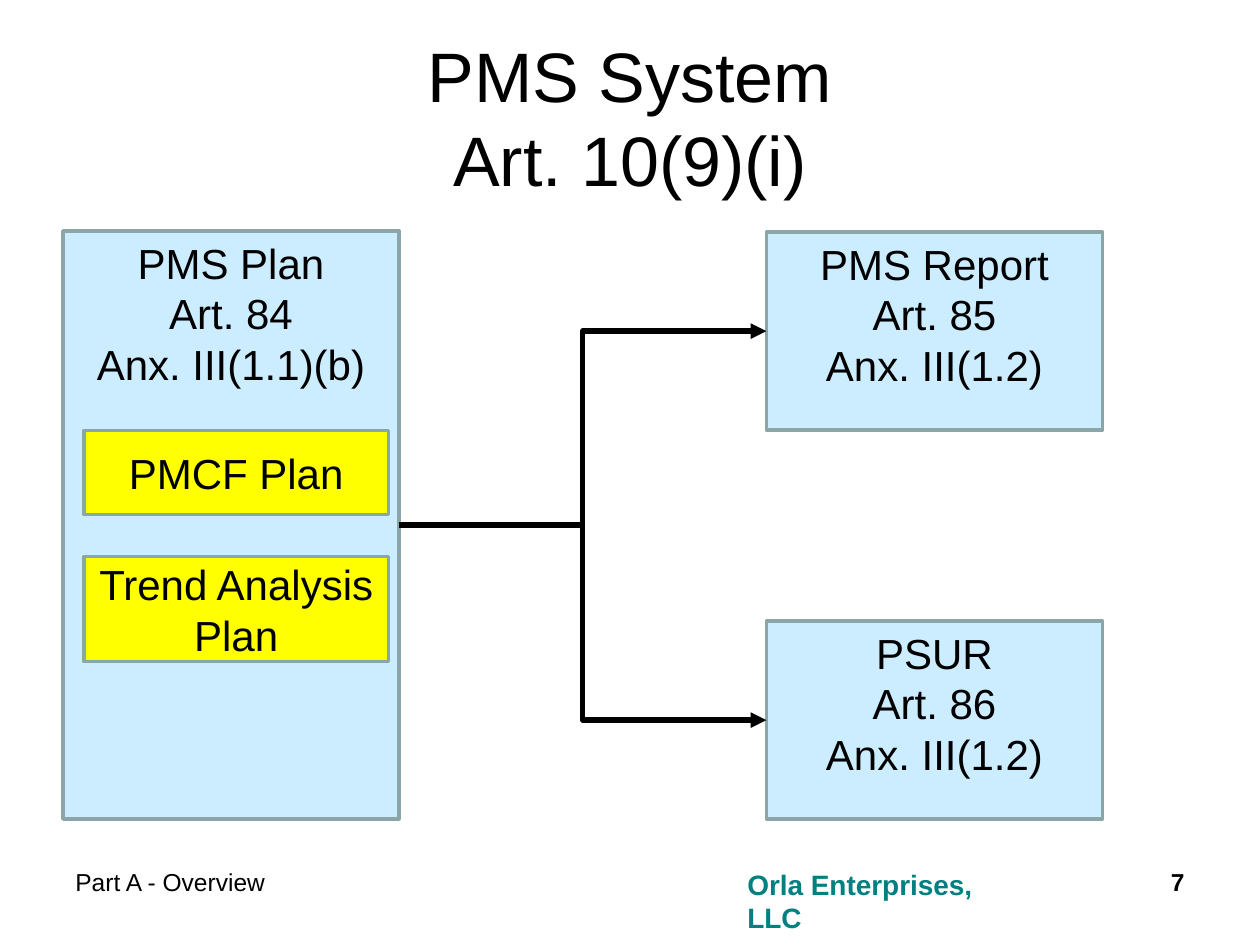
from lxml import etree
from pptx import Presentation
from pptx.dml.color import RGBColor
from pptx.enum.shapes import MSO_CONNECTOR, MSO_SHAPE
from pptx.enum.text import MSO_ANCHOR, PP_ALIGN
from pptx.oxml.ns import qn
from pptx.util import Pt

RECTANGLE = MSO_SHAPE.RECTANGLE
ELBOW = MSO_CONNECTOR.ELBOW
TOP, MIDDLE = MSO_ANCHOR.TOP, MSO_ANCHOR.MIDDLE
LEFT, CENTER, RIGHT = PP_ALIGN.LEFT, PP_ALIGN.CENTER, PP_ALIGN.RIGHT
LEFT_SIDE, RIGHT_SIDE = 1, 3

BLACK = RGBColor(0x00, 0x00, 0x00)
TEAL = RGBColor(0x00, 0x80, 0x80)
PALE_BLUE = RGBColor(0xCC, 0xEC, 0xFF)
YELLOW = RGBColor(0xFF, 0xFF, 0x00)
GRAY_GREEN = RGBColor(0x8A, 0xA6, 0xA8)


def write_text(shape, text, size=24, color=BLACK, bold=False, align=CENTER, anchor=TOP):
    frame = shape.text_frame
    frame.word_wrap = True
    frame.vertical_anchor = anchor
    frame.text = text
    for paragraph in frame.paragraphs:
        paragraph.alignment = align
        for run in paragraph.runs:
            run.font.name = "Arial"
            run.font.size = Pt(size)
            run.font.bold = bold
            run.font.color.rgb = color


presentation = Presentation()
presentation.slide_width, presentation.slide_height = Pt(720), Pt(540)
slide = presentation.slides.add_slide(presentation.slide_layouts[6])

# Title and footer
labels = [
    ((420, 492, 168.5, 27), "Orla Enterprises, LLC",
     dict(size=16, color=TEAL, bold=True, align=LEFT)),
    ((36, 21.6, 648, 90), "PMS System\vArt. 10(9)(i)", dict(size=40, anchor=MIDDLE)),
    ((36, 492, 372, 37.5), "Part A - Overview", dict(size=14, align=LEFT)),
    ((606, 492, 78, 37.5), "7", dict(size=14, bold=True, align=RIGHT)),
]
for position, text, text_format in labels:
    write_text(slide.shapes.add_textbox(*map(Pt, position)), text, **text_format)

# Plan with its two parts, and the two reports
boxes = [
    ((36, 132, 192, 336), PALE_BLUE, TOP, "PMS Plan\nArt. 84\nAnx. III(1.1)(b)"),
    ((48, 246, 174, 48), YELLOW, MIDDLE, "PMCF Plan"),
    ((48, 318, 174, 60), YELLOW, MIDDLE, "Trend Analysis Plan"),
    ((438, 132.75, 192, 113), PALE_BLUE, TOP, "PMS Report\nArt. 85\nAnx. III(1.2)"),
    ((438, 355, 192, 113), PALE_BLUE, TOP, "PSUR\nArt. 86\nAnx. III(1.2)"),
]
shapes = []
for position, fill, anchor, text in boxes:
    shape = slide.shapes.add_shape(RECTANGLE, *map(Pt, position))
    shape.shadow.inherit = False
    shape.fill.solid()
    shape.fill.fore_color.rgb = fill
    shape.line.color.rgb = GRAY_GREEN
    shape.line.width = Pt(2)
    write_text(shape, text, anchor=anchor)
    shapes.append(shape)

# Arrows from the plan to each report
plan, pmcf_plan, trend_plan, *reports = shapes
for report in reports:
    connector = slide.shapes.add_connector(
        ELBOW, plan.left + plan.width, plan.top + plan.height // 2,
        report.left, report.top + report.height // 2)
    connector.begin_connect(plan, RIGHT_SIDE)
    connector.end_connect(report, LEFT_SIDE)
    connector.line.color.rgb = BLACK
    connector.line.width = Pt(3)
    etree.SubElement(connector.line._get_or_add_ln(), qn("a:tailEnd"), type="triangle")
    etree.SubElement(connector._element.spPr, qn("a:effectLst"))

presentation.save("out.pptx")
